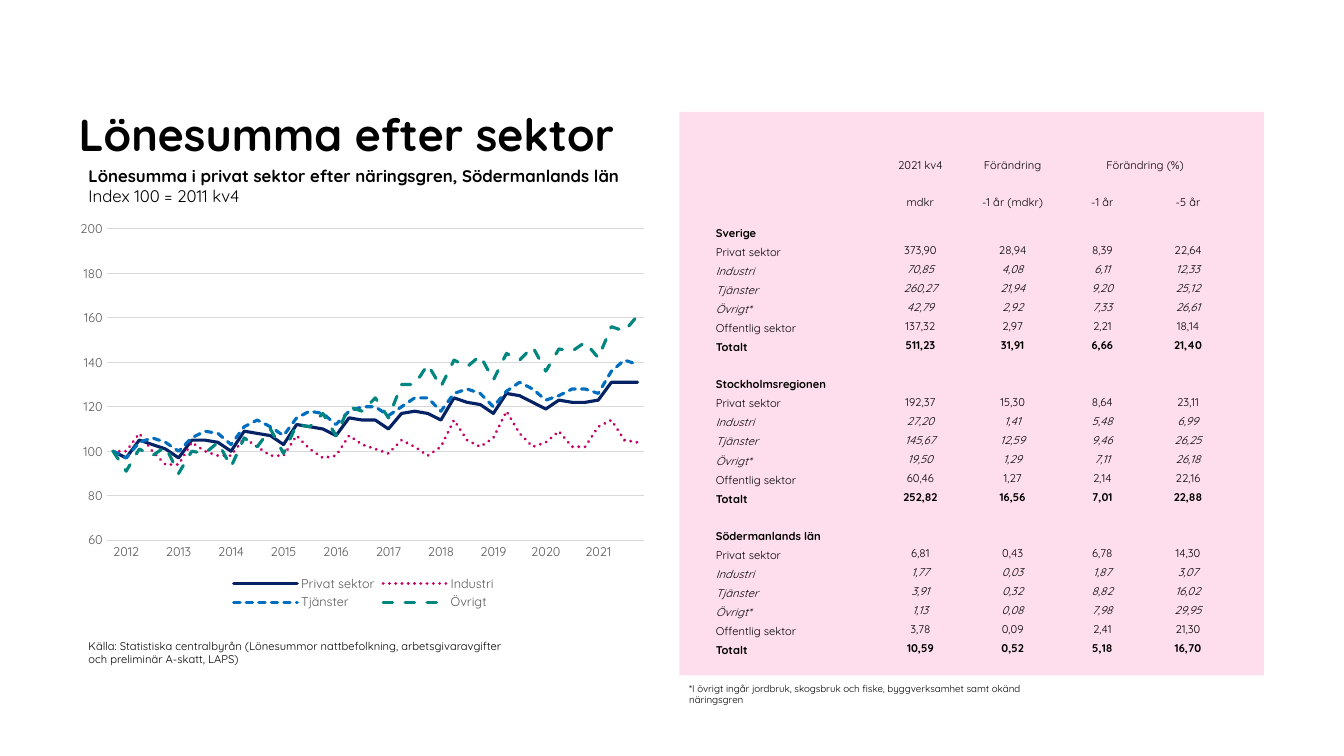
from dataclasses import dataclass

from lxml.etree import SubElement
from pptx import Presentation
from pptx.chart.data import CategoryChartData
from pptx.dml.color import RGBColor as Rgb
from pptx.enum.chart import XL_CHART_TYPE as ChartType, XL_LEGEND_POSITION as LegendPos
from pptx.enum.chart import XL_TICK_MARK as Tick
from pptx.enum.dml import MSO_LINE as Dash
from pptx.enum.shapes import MSO_SHAPE as Shape
from pptx.enum.text import MSO_ANCHOR as Anchor, MSO_AUTO_SIZE as AutoSize, PP_ALIGN as Align
from pptx.oxml import parse_xml
from pptx.oxml.ns import nsdecls, qn
from pptx.util import Cm, Pt

NO_TABLE_STYLE = "{2D5ABB26-0587-4C30-8999-92F81FD0307C}"


@dataclass(frozen=True)
class Theme:
    font: str = "Quicksand"
    ink: str = "000000"
    axis: str = "595959"
    grid: str = "D9D9D9"
    panel: str = "FEDEED"
    private: str = "052364"
    industry: str = "C40064"
    services: str = "006EBF"
    other: str = "00867F"
    title_size: int = 32
    heading_size: int = 12
    axis_size: int = 9
    small_size: int = 8
    note_size: int = 7


def apply(target, values):
    for name, value in values.items():
        setattr(target, name, value)


class SlideBuilder:
    def __init__(self, slide, theme):
        self.slide = slide
        self.theme = theme

    def style(self, font, size, color=None, **extra):
        apply(font, {"name": self.theme.font, "size": Pt(size), "bold": False, **extra})
        font.color.rgb = Rgb.from_string(color or self.theme.ink)

    def title(self, text, box):
        heading = self.slide.shapes.title
        apply(heading, dict(zip(("left", "top", "width", "height"), map(Cm, box))))
        frame = heading.text_frame
        apply(frame, {"margin_left": 0, "margin_right": 0, "margin_top": 0, "margin_bottom": 0,
                      "vertical_anchor": Anchor.BOTTOM, "word_wrap": True})
        line = frame.paragraphs[0]
        line.alignment = Align.LEFT
        run = line.add_run()
        run.text = text
        self.style(run.font, self.theme.title_size, bold=True)

    def text(self, lines, box, size):
        frame = self.slide.shapes.add_textbox(*map(Cm, box)).text_frame
        apply(frame, {"word_wrap": True, "auto_size": AutoSize.SHAPE_TO_FIT_TEXT})
        paragraph = frame.paragraphs[0]
        for index, (words, bold) in enumerate(lines):
            if index:
                paragraph.add_line_break()
            run = paragraph.add_run()
            run.text = words
            self.style(run.font, size, bold=bold)

    def panel(self, box):
        panel = self.slide.shapes.add_shape(Shape.RECTANGLE, *map(Cm, box))
        panel.shadow.inherit = False
        panel.fill.solid()
        panel.fill.fore_color.rgb = Rgb.from_string(self.theme.panel)
        panel.line.fill.background()

    def cell(self, cell, words, in_first_column, is_header, **emphasis):
        cell.fill.background()
        bottom = in_first_column or is_header
        apply(cell, {"margin_left": Cm(0.03), "margin_right": Cm(0.03), "margin_top": Cm(0.03),
                     "margin_bottom": 0,
                     "vertical_anchor": Anchor.BOTTOM if bottom else Anchor.MIDDLE})
        paragraph = cell.text_frame.paragraphs[0]
        paragraph.alignment = Align.LEFT if in_first_column else Align.CENTER
        if words:
            run = paragraph.add_run()
            run.text = words
            self.style(run.font, self.theme.small_size, **emphasis)
        else:
            SubElement(paragraph._p, qn("a:endParaRPr"), sz=str(self.theme.small_size * 100))

    def table(self, rows, box, widths, heights, header_count):
        table = self.slide.shapes.add_table(len(rows), len(widths), *map(Cm, box)).table
        apply(table, {"first_row": False, "horz_banding": False})
        table._tbl.tblPr[0].text = NO_TABLE_STYLE
        for column, width in zip(table.columns, widths):
            column.width = Cm(width)
        for row, height in zip(table.rows, heights):
            row.height = Cm(height)
        for r, row in enumerate(rows):
            is_header = r < header_count
            bold = not is_header and (row[0] == "Totalt" or not row[1])
            italic = row[0] in ("Industri", "Tjänster", "Övrigt*")
            for c, words in enumerate(row):
                self.cell(table.cell(r, c), words, c == 0, is_header, bold=bold, italic=italic)
        return table

    def place(self, part, index, x, y, w, h, inner=False):
        for old in part.findall(qn("c:layout")):
            part.remove(old)
        target = '<c:layoutTarget val="inner"/>' if inner else ""
        part.insert(index, parse_xml(
            f'<c:layout {nsdecls("c")}><c:manualLayout>{target}'
            '<c:xMode val="edge"/><c:yMode val="edge"/>'
            f'<c:x val="{x}"/><c:y val="{y}"/><c:w val="{w}"/><c:h val="{h}"/>'
            '</c:manualLayout></c:layout>'))

    def line_chart(self, categories, series, box):
        theme = self.theme
        data = CategoryChartData()
        data.categories = categories
        for name, values, _, _ in series:
            data.add_series(name, values)
        chart = self.slide.shapes.add_chart(ChartType.LINE, *map(Cm, box), data).chart
        apply(chart, {"has_title": False, "has_legend": True})
        self.style(chart.font, 10)
        for line, (_, _, color, dash) in zip(chart.plots[0].series, series):
            line.smooth = False
            stroke = line.format.line
            stroke.color.rgb = Rgb.from_string(color)
            apply(stroke, {"width": Pt(2.25), "dash_style": dash})
            stroke._ln.set("cap", "rnd")
        years, index = chart.category_axis, chart.value_axis
        for axis in (years, index):
            apply(axis, {"major_tick_mark": Tick.NONE, "minor_tick_mark": Tick.NONE})
            self.style(axis.tick_labels.font, theme.axis_size, theme.axis)
        apply(index, {"minimum_scale": 60, "maximum_scale": 200, "major_unit": 20,
                      "has_major_gridlines": True})
        index.format.line.fill.background()
        for stroke in (years.format.line, index.major_gridlines.format.line):
            stroke.color.rgb = Rgb.from_string(theme.grid)
            stroke.width = Pt(0.75)
        years._element.find(qn("c:txPr")).find(qn("a:bodyPr")).set("rot", "-60000000")
        skip = parse_xml(f'<c:tickLblSkip {nsdecls("c")} val="1"/>')
        years._element.find(qn("c:noMultiLvlLbl")).addprevious(skip)
        legend = chart.legend
        apply(legend, {"position": LegendPos.BOTTOM, "include_in_layout": False})
        self.style(legend.font, theme.axis_size, theme.axis)
        self.place(legend._element, 1, 0.27, 0.89, 0.46, 0.1)
        plot_area = chart._chartSpace.xpath(".//c:plotArea")[0]
        self.place(plot_area, 0, 0.06, 0.04, 0.92, 0.77, inner=True)


THEME = Theme()
LABELS = ("Privat sektor", "Industri", "Tjänster", "Övrigt*", "Offentlig sektor", "Totalt")
REGIONS = {
    "Sverige": """373,90 28,94 8,39 22,64 70,85 4,08 6,11 12,33 260,27 21,94 9,20 25,12
        42,79 2,92 7,33 26,61 137,32 2,97 2,21 18,14 511,23 31,91 6,66 21,40""",
    "Stockholmsregionen": """192,37 15,30 8,64 23,11 27,20 1,41 5,48 6,99 145,67 12,59 9,46 26,25
        19,50 1,29 7,11 26,18 60,46 1,27 2,14 22,16 252,82 16,56 7,01 22,88""",
    "Södermanlands län": """6,81 0,43 6,78 14,30 1,77 0,03 1,87 3,07 3,91 0,32 8,82 16,02
        1,13 0,08 7,98 29,95 3,78 0,09 2,41 21,30 10,59 0,52 5,18 16,70""",
}
SERIES = [
    ("Privat sektor", [100, 97, 105, 103, 101, 97, 105, 105, 104, 100, 109, 108, 107, 103,
                       112, 111, 110, 107, 115, 114, 114, 110, 117, 118, 117, 114, 124, 122,
                       121, 117, 126, 125, 122, 119, 123, 122, 122, 123, 131, 131, 131],
     THEME.private, Dash.SOLID),
    ("Industri", [100, 100, 108, 100, 94, 94, 104, 100, 98, 98, 106, 102, 98, 98,
                  107, 101, 97, 98, 107, 103, 101, 99, 105, 102, 98, 102, 114, 105,
                  102, 106, 118, 108, 102, 104, 109, 102, 102, 111, 114, 105, 104],
     THEME.industry, Dash.ROUND_DOT),
    ("Tjänster", [100, 97, 104, 106, 104, 100, 106, 109, 108, 103, 111, 114, 111, 107,
                  115, 118, 117, 112, 118, 120, 120, 116, 120, 124, 124, 118, 126, 128,
                  126, 120, 127, 131, 128, 123, 125, 128, 128, 126, 136, 141, 139],
     THEME.services, Dash.SQUARE_DOT),
    ("Övrigt", [100, 91, 101, 98, 102, 90, 100, 99, 104, 93, 106, 102, 110, 99,
                112, 111, 117, 107, 120, 118, 124, 115, 130, 130, 139, 129, 141, 138,
                143, 132, 144, 141, 147, 136, 146, 145, 149, 142, 156, 154, 161],
     THEME.other, Dash.DASH),
]


def main():
    deck = Presentation()
    apply(deck, {"slide_width": Cm(33.87), "slide_height": Cm(19.05)})
    page = SlideBuilder(deck.slides.add_slide(deck.slide_layouts[5]), THEME)
    page.title("Lönesumma efter sektor", (1.98, 0.94, 23.42, 3.1))
    page.text([("Källa: Statistiska centralbyrån (Lönesummor nattbefolkning, arbetsgivaravgifter "
                "och preliminär A-skatt, LAPS)", False)], (1.98, 15.98, 11.2, 0.94), THEME.small_size)
    page.panel((17.12, 2.82, 14.73, 14.2))
    page.text([("Lönesumma i privat sektor efter näringsgren, Södermanlands län", True),
               ("Index 100 = 2011 kv4", False)], (1.98, 4.04, 14.73, 1.27), THEME.heading_size)

    rows = [("", "2021 kv4", "Förändring", "Förändring (%)", ""),
            ("", "mdkr", "-1 år (mdkr)", "-1 år", "-5 år")]
    heights = [0.94, 0.94]
    for region, figures in REGIONS.items():
        values = figures.split()
        heights += [0.77 if region == "Sverige" else 0.94] + [0.48] * len(LABELS)
        rows.append((region, "", "", "", ""))
        rows += [(label, *values[4 * i:4 * i + 4]) for i, label in enumerate(LABELS)]
    wages = page.table(rows, (18.01, 3.4, 13, sum(heights)),
                       (4.04, 2.29, 2.36, 2.16, 2.16), heights, header_count=2)
    wages.cell(0, 3).merge(wages.cell(0, 4))

    page.text([("*I övrigt ingår jordbruk, skogsbruk och fiske, byggverksamhet samt okänd "
                "näringsgren", False)], (17.12, 17.07, 9.91, 1.14), THEME.note_size)
    quarters = [str(2012 + i // 4) if i % 4 == 1 else "" for i in range(41)]
    page.line_chart(quarters, SERIES, (1.8, 5.36, 14.73, 10.19))
    deck.save("out.pptx")


if __name__ == "__main__":
    main()
